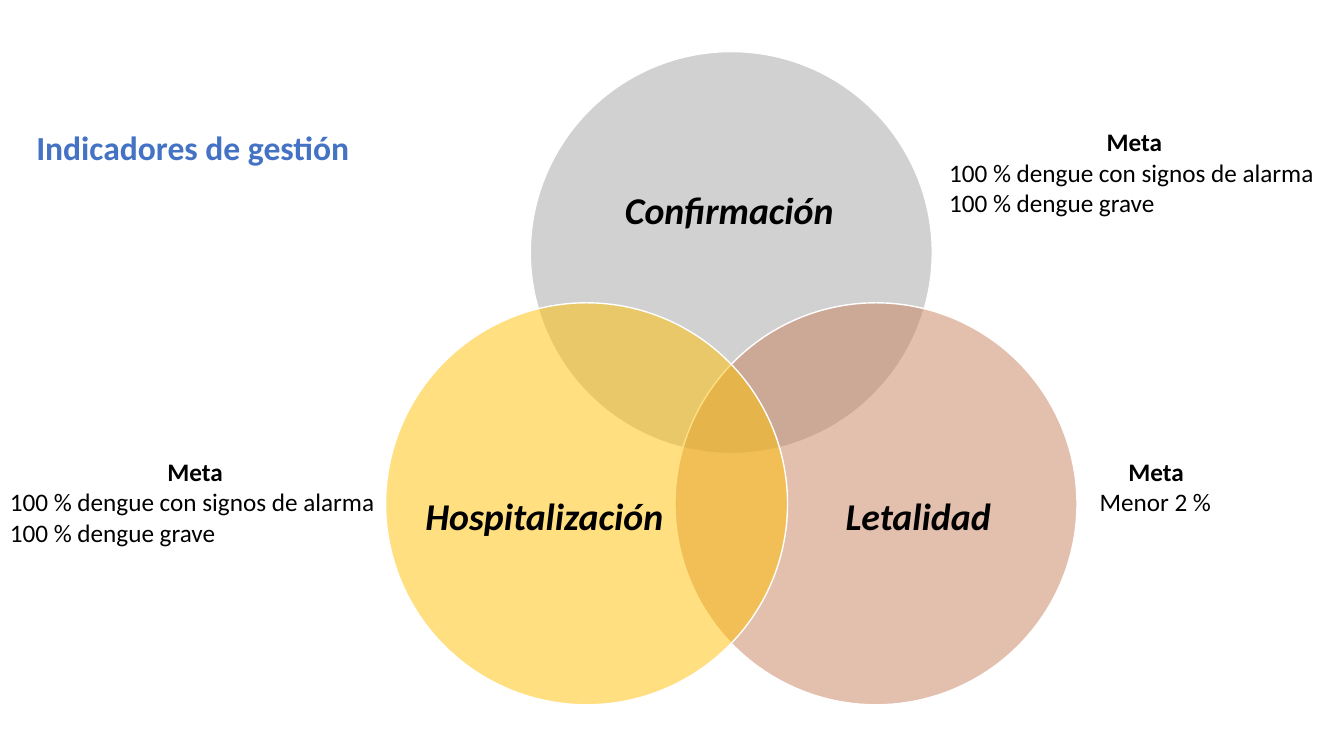
from dataclasses import dataclass

from lxml.etree import SubElement
from pptx import Presentation
from pptx.dml.color import RGBColor as Rgb
from pptx.enum.shapes import MSO_SHAPE as Shape
from pptx.enum.text import MSO_ANCHOR as Anchor, MSO_AUTO_SIZE as Fit, PP_ALIGN as Align
from pptx.oxml.ns import qn
from pptx.util import Cm, Pt


@dataclass(frozen=True)
class Theme:
    font: str = "Calibri"
    ink: str = "000000"
    blue: str = "4472C4"
    white: str = "FFFFFF"
    gray: str = "A5A5A5"
    brown: str = "C9815D"
    gold: str = "FFC000"
    alpha: int = 50
    head: int = 24
    label: int = 27
    body: int = 18


class Deck:
    def __init__(self, theme, width, height):
        self.theme = theme
        self.prs = Presentation()
        self.prs.slide_width, self.prs.slide_height = Cm(width), Cm(height)
        self.slide = self.prs.slides.add_slide(self.prs.slide_layouts[5])

    def style(self, para, size, color, bold=False, italic=False):
        for run in para.runs:
            font = run.font
            font.name, font.size = self.theme.font, Pt(size)
            font.bold, font.italic = bold, italic
            font.color.rgb = Rgb.from_string(color)

    def title(self, text, *box):
        shape = self.slide.shapes.title
        shape.left, shape.top, shape.width, shape.height = map(Cm, box)
        frame = shape.text_frame
        frame.text = text
        frame.word_wrap, frame.auto_size = False, Fit.SHAPE_TO_FIT_TEXT
        frame.vertical_anchor = Anchor.TOP
        para = frame.paragraphs[0]
        para.alignment = Align.LEFT
        self.style(para, self.theme.head, self.theme.blue, bold=True)

    def circle(self, left, top, size, color):
        shape = self.slide.shapes.add_shape(
            Shape.OVAL, Cm(left), Cm(top), Cm(size), Cm(size))
        shape.shadow.inherit = False
        shape.fill.solid()
        shape.fill.fore_color.rgb = Rgb.from_string(color)
        tint = shape.fill._xPr.find(qn("a:solidFill"))[0]
        SubElement(tint, qn("a:alpha"), val=str(self.theme.alpha * 1000))
        shape.line.color.rgb = Rgb.from_string(self.theme.white)
        shape.line.width = Pt(1)

    def label(self, text, *box):
        frame = self.slide.shapes.add_textbox(*map(Cm, box)).text_frame
        frame.text = text
        frame.word_wrap, frame.vertical_anchor = True, Anchor.MIDDLE
        frame.margin_left = frame.margin_right = 0
        frame.margin_top = frame.margin_bottom = 0
        para = frame.paragraphs[0]
        para.alignment, para.line_spacing = Align.CENTER, 0.9
        self.style(para, self.theme.label, self.theme.ink, bold=True, italic=True)

    def goal(self, lines, *box):
        """Add a centred bold "Meta" heading above plain lines."""
        frame = self.slide.shapes.add_textbox(*map(Cm, box)).text_frame
        frame.text = "\n".join(["Meta", *lines])
        frame.word_wrap, frame.auto_size = False, Fit.SHAPE_TO_FIT_TEXT
        for i, para in enumerate(frame.paragraphs):
            para.alignment = Align.LEFT if i else Align.CENTER
            self.style(para, self.theme.body, self.theme.ink, bold=not i)


def main():
    theme = Theme()
    deck = Deck(theme, 33.87, 19.05)
    deck.title("Indicadores de gestión", 0.66, 3.07, 8.48, 1.27)

    size, mid, top = 10.13, 18.43, 1.3
    # Name, colour, centre shift and drop, label box; all as shares of the size
    venn = [
        ("Confirmación", theme.gray, 0, 0, (0.13, 0.175, 0.73, 0.45)),
        ("Letalidad", theme.brown, 0.36, 0.625, (0.305, 0.26, 0.6, 0.55)),
        ("Hospitalización", theme.gold, -0.36, 0.625, (0.095, 0.26, 0.6, 0.55)),
    ]
    for name, color, shift, drop, (x, y, w, h) in venn:
        left, high = mid + (shift - 0.5) * size, top + drop * size
        deck.circle(left, high, size, color)
        deck.label(name, left + x * size, high + y * size, w * size, h * size)

    alarm = ["100 % dengue con signos de alarma", "100 % dengue grave"]
    deck.goal(alarm, 23.67, 3.07, 9.83, 2.57)
    deck.goal(["Menor 2 %"], 27.46, 11.38, 3.35, 1.8)
    deck.goal(alarm, 0, 11.38, 9.83, 2.57)
    deck.prs.save("out.pptx")


if __name__ == "__main__":
    main()
